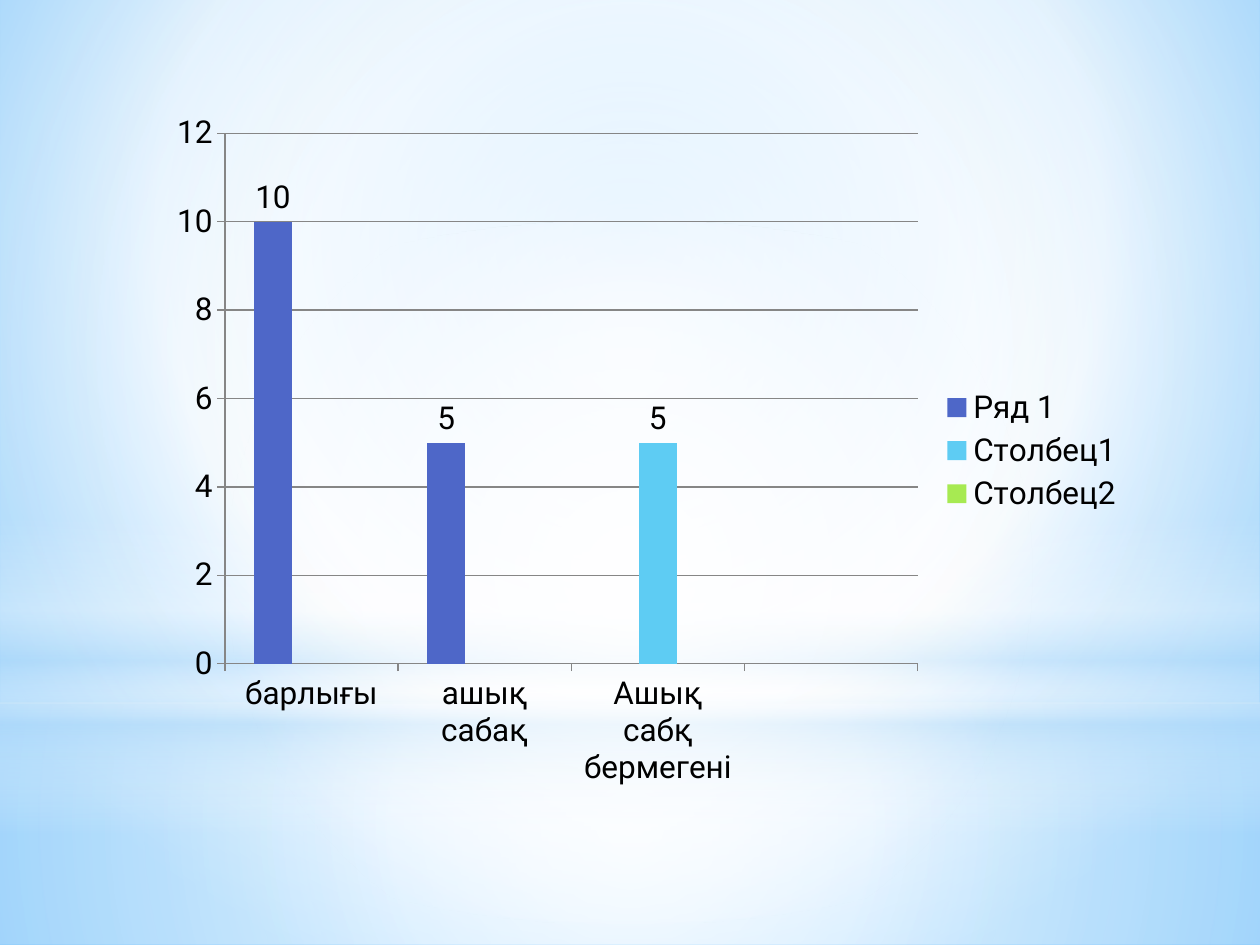
from lxml import etree
from pptx import Presentation
from pptx.chart.data import CategoryChartData
from pptx.dml.color import RGBColor
from pptx.enum.chart import XL_CHART_TYPE, XL_LABEL_POSITION, XL_LEGEND_POSITION, XL_TICK_MARK
from pptx.enum.shapes import MSO_SHAPE
from pptx.oxml.ns import qn
from pptx.util import Inches, Pt

HEX = {"white": "FFFFFF", "pale": "B4DCFA", "sky": "9ED5FF", "deep": "5BB9FF",
       "text": "000000", "line": "868686",
       "blue": "4E67C8", "cyan": "5ECCF3", "lime": "A7EA52"}
MID = (50, 50, 50, 50)


def paint(owner, stops, rect=None):
    """Swap the solid fill in owner for a gradient of (place, colour, opacity) stops.

    It is round, growing out of rect (left, top, right, bottom insets), or runs downwards.
    """
    grad = etree.Element(qn("a:gradFill"), rotWithShape="1")
    row = etree.SubElement(grad, qn("a:gsLst"))
    for place, name, alpha in stops:
        stop = etree.SubElement(row, qn("a:gs"), pos=str(place * 1000))
        tint = etree.SubElement(stop, qn("a:srgbClr"), val=HEX[name])
        if alpha < 100:
            etree.SubElement(tint, qn("a:alpha"), val=str(alpha * 1000))
    if rect:
        way = etree.SubElement(grad, qn("a:path"), path="circle")
        sides = {side: str(part * 1000) for side, part in zip("ltrb", rect)}
        etree.SubElement(way, qn("a:fillToRect"), **sides)
    else:
        etree.SubElement(grad, qn("a:lin"), ang="5400000", scaled="0")
    solid = owner.find(qn("a:solidFill"))
    owner.replace(solid, grad)


deck = Presentation()
deck.slide_width, deck.slide_height = Inches(10), Inches(7.5)
slide = deck.slides.add_slide(deck.slide_layouts[6])
wide, high = deck.slide_width, deck.slide_height

# Backdrop
slide.background.fill.solid()
paint(next(slide.element.iter(qn("p:bgPr"))),
      [(0, "sky", 100), (60, "white", 100), (100, "deep", 100)], (20, 10, 20, 60))

# Glows: shape, top, height, stops, centre
glows = [
    (MSO_SHAPE.RECTANGLE, 5.58, 1.92,
     [(0, "white", 91), (37, "white", 76), (100, "pale", 79)], MID),
    (MSO_SHAPE.RECTANGLE, 0, 5.58,
     [(0, "white", 89), (48, "white", 62), (100, "pale", 79)], MID),
    (MSO_SHAPE.RECTANGLE, 4.12, 2.5,
     [(0, "white", 0), (29, "white", 30), (45, "pale", 40),
      (55, "white", 26), (65, "pale", 60), (100, "white", 0)], None),
    (MSO_SHAPE.OVAL, 1.75, 5.58, [(0, "white", 100), (56, "white", 0)], MID),
]
for kind, top, tall, stops, rect in glows:
    glow = slide.shapes.add_shape(kind, 0, Inches(top), wide, Inches(tall))
    glow.shadow.inherit = False
    glow.line.fill.background()
    glow.fill.solid()
    paint(glow.element.spPr, stops, rect)

# Lesson chart
data = CategoryChartData()
data.categories = ["барлығы", "ашық сабақ", "Ашық сабқ бермегені", ""]
data.add_series("Ряд 1", [10, 5, None, None])
data.add_series("Столбец1", [None, None, 5, None])
data.add_series("Столбец2", [None] * 4)
chart = slide.shapes.add_chart(
    XL_CHART_TYPE.COLUMN_CLUSTERED, int(wide * 0.125), int(high * 0.107),
    int(wide * 0.777), int(high * 0.74), data).chart
chart.has_title = False
chart.font.name = "Roboto"
chart.font.size = Pt(18)
chart.font.color.rgb = RGBColor.from_string(HEX["text"])
chart.has_legend = True
chart.legend.position = XL_LEGEND_POSITION.RIGHT
chart.legend.include_in_layout = False

plot = chart.plots[0]
plot.gap_width = 150
plot.vary_by_categories = False
for bars, name in zip(plot.series, ("blue", "cyan", "lime")):
    bars.format.fill.solid()
    bars.format.fill.fore_color.rgb = RGBColor.from_string(HEX[name])
    bars.data_labels.show_value = True
    bars.data_labels.position = XL_LABEL_POSITION.OUTSIDE_END

chart.value_axis.has_major_gridlines = True
for axis in (chart.category_axis, chart.value_axis):
    axis.major_tick_mark = XL_TICK_MARK.OUTSIDE
    axis.minor_tick_mark = XL_TICK_MARK.NONE
for part in (chart.category_axis, chart.value_axis, chart.value_axis.major_gridlines):
    part.format.line.width = Pt(0.75)
    part.format.line.color.rgb = RGBColor.from_string(HEX["line"])

deck.save("out.pptx")
